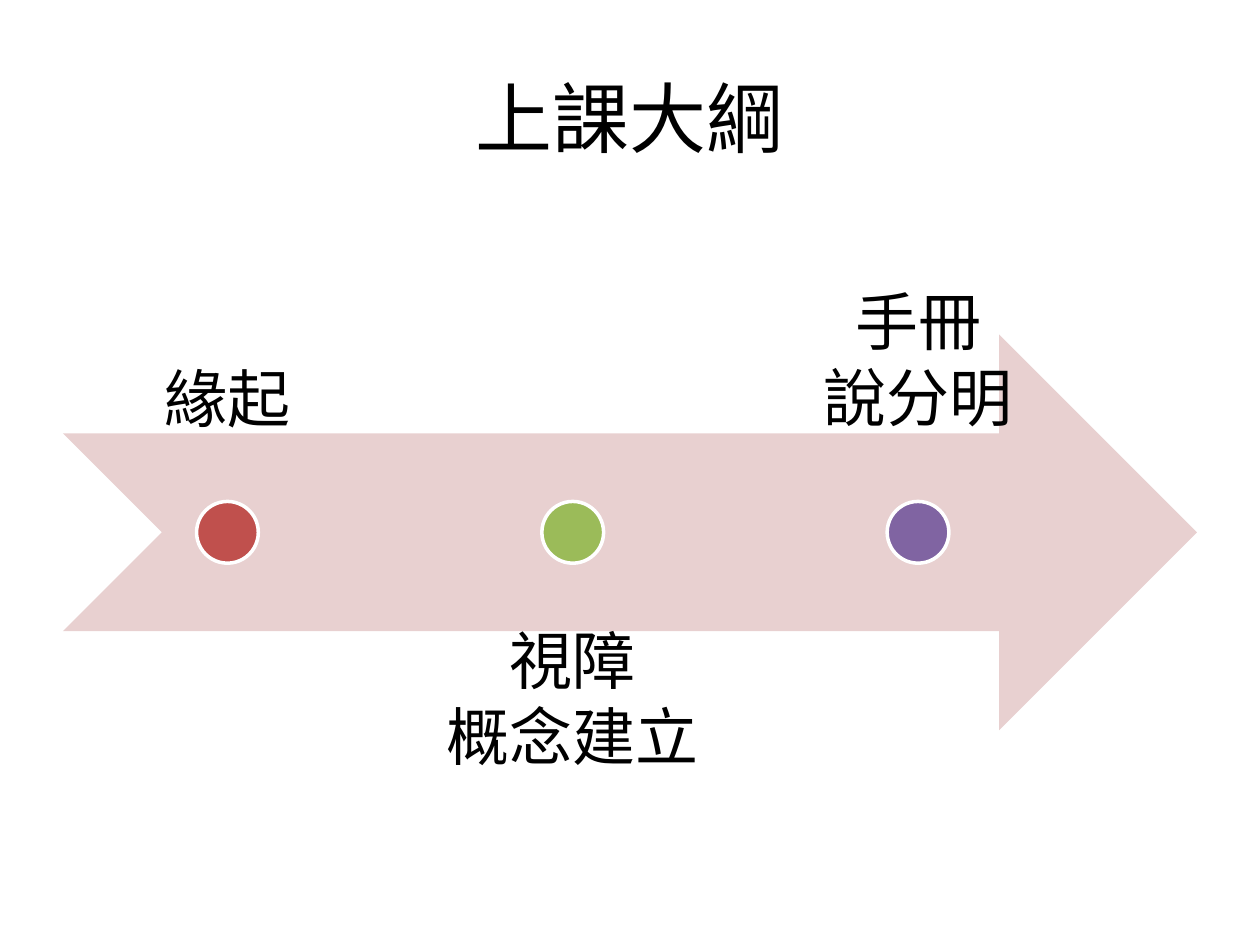
from lxml import etree
from pptx import Presentation
from pptx.dml.color import RGBColor
from pptx.enum.shapes import MSO_SHAPE
from pptx.enum.text import MSO_ANCHOR, PP_ALIGN
from pptx.oxml.ns import qn
from pptx.util import Inches, Pt

FONT = "Noto Sans CJK SC"
STEPS = [
    (["緣起"], "C0504D"),
    (["視障", "概念建立"], "9BBB59"),
    (["手冊", "說分明"], "8064A2"),
]


def color(value):
    return RGBColor.from_string(value)


def set_attrs(obj, values):
    for name, value in values.items():
        setattr(obj, name, value)


def write(tf, lines, size, frame_format, paragraph_format):
    set_attrs(tf, {"word_wrap": True, **frame_format})
    for i, line in enumerate(lines):
        p = tf.paragraphs[0] if i == 0 else tf.add_paragraph()
        set_attrs(p, {"alignment": PP_ALIGN.CENTER, **paragraph_format})
        r = p.add_run()
        r.text = line
        set_attrs(r.font, {"size": Pt(size), "name": FONT})
        r.font.color.rgb = color("000000")
        etree.SubElement(r.font._element, qn("a:ea"), typeface=FONT)


def add_shape(s, kind, box, fill, line=None):
    sp = s.shapes.add_shape(kind, *map(Inches, box))
    sp.shadow.inherit = False
    sp.fill.solid()
    sp.fill.fore_color.rgb = color(fill)
    if line:
        sp.line.color.rgb = color(line)
        sp.line.width = Pt(2)
    else:
        sp.line.fill.background()


def add_title(s, text, box):
    title = s.shapes.title
    set_attrs(title, dict(zip(("left", "top", "width", "height"), map(Inches, box))))
    write(title.text_frame, [text], 44, {"vertical_anchor": MSO_ANCHOR.MIDDLE}, {})


def add_timeline(s, steps, box):
    left, top, width, height = box
    arrow_h, label_w, label_h, dot = 3.14, 2.61, 1.98, 0.49
    pitch = label_w * 1.05
    middle = top + height / 2
    add_shape(s, MSO_SHAPE.NOTCHED_RIGHT_ARROW,
              (left, middle - arrow_h / 2, width, arrow_h), "E8D0D0")
    margin = Inches(0.28)
    margins = {f"margin_{side}": margin for side in ("left", "top", "right", "bottom")}
    for i, (lines, fill) in enumerate(steps):
        x = left + i * pitch
        above = i % 2 == 0
        y = top if above else top + height - label_h
        anchor = MSO_ANCHOR.BOTTOM if above else MSO_ANCHOR.TOP
        label = s.shapes.add_textbox(*map(Inches, (x, y, label_w, label_h)))
        write(label.text_frame, lines, 36, {"vertical_anchor": anchor, **margins},
              {"line_spacing": 0.9, "space_after": Pt(4.5)})
        add_shape(s, MSO_SHAPE.OVAL,
                  (x + (label_w - dot) / 2, middle - dot / 2, dot, dot), fill, "FFFFFF")


def main():
    prs = Presentation()
    set_attrs(prs, {"slide_width": Inches(10), "slide_height": Inches(7.5)})
    s = prs.slides.add_slide(prs.slide_layouts[5])
    add_title(s, "上課大綱", (0.5, 0.3, 9, 1.25))
    add_timeline(s, STEPS, (0.5, 1.75, 9, 4.95))
    prs.save("out.pptx")


if __name__ == "__main__":
    main()
